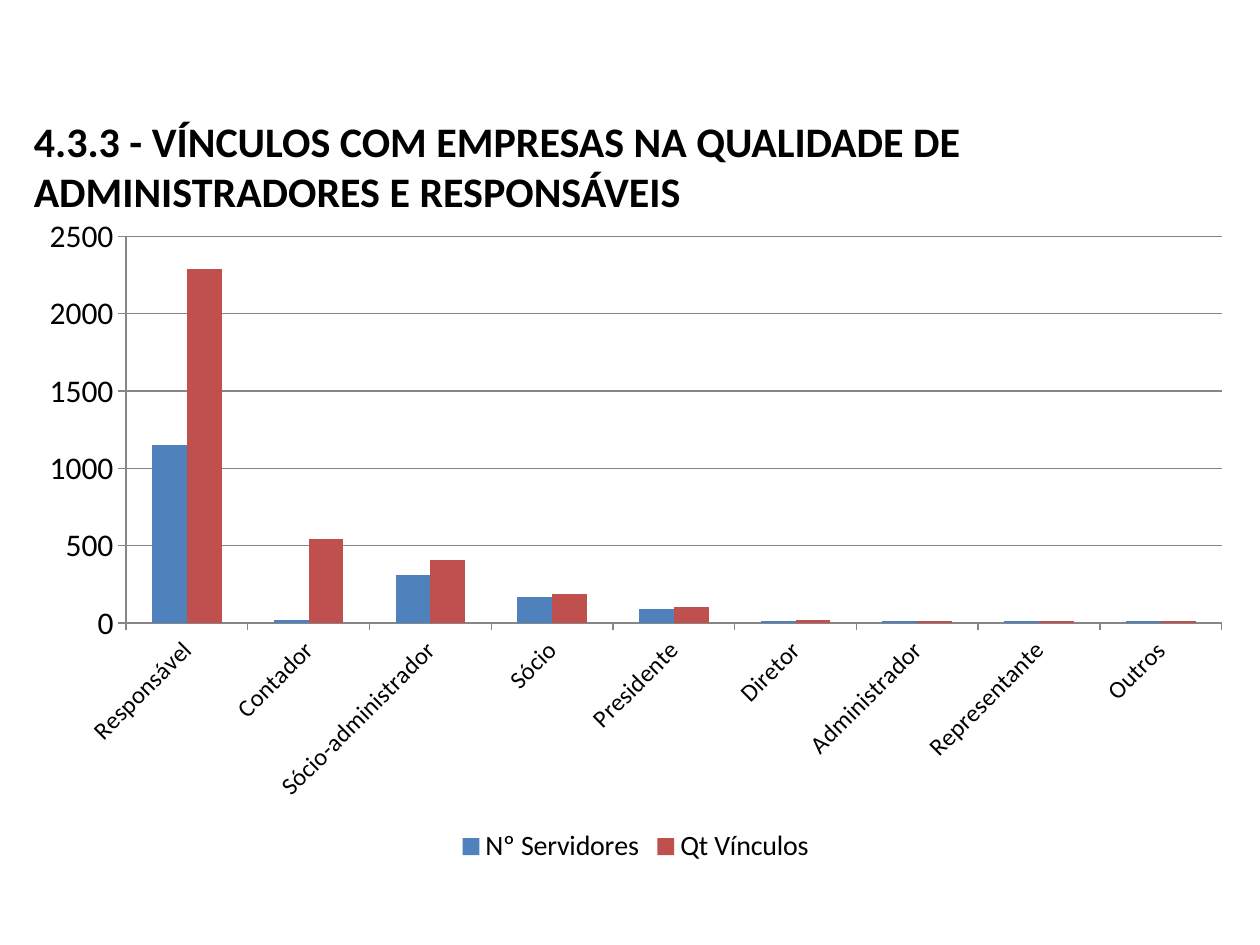
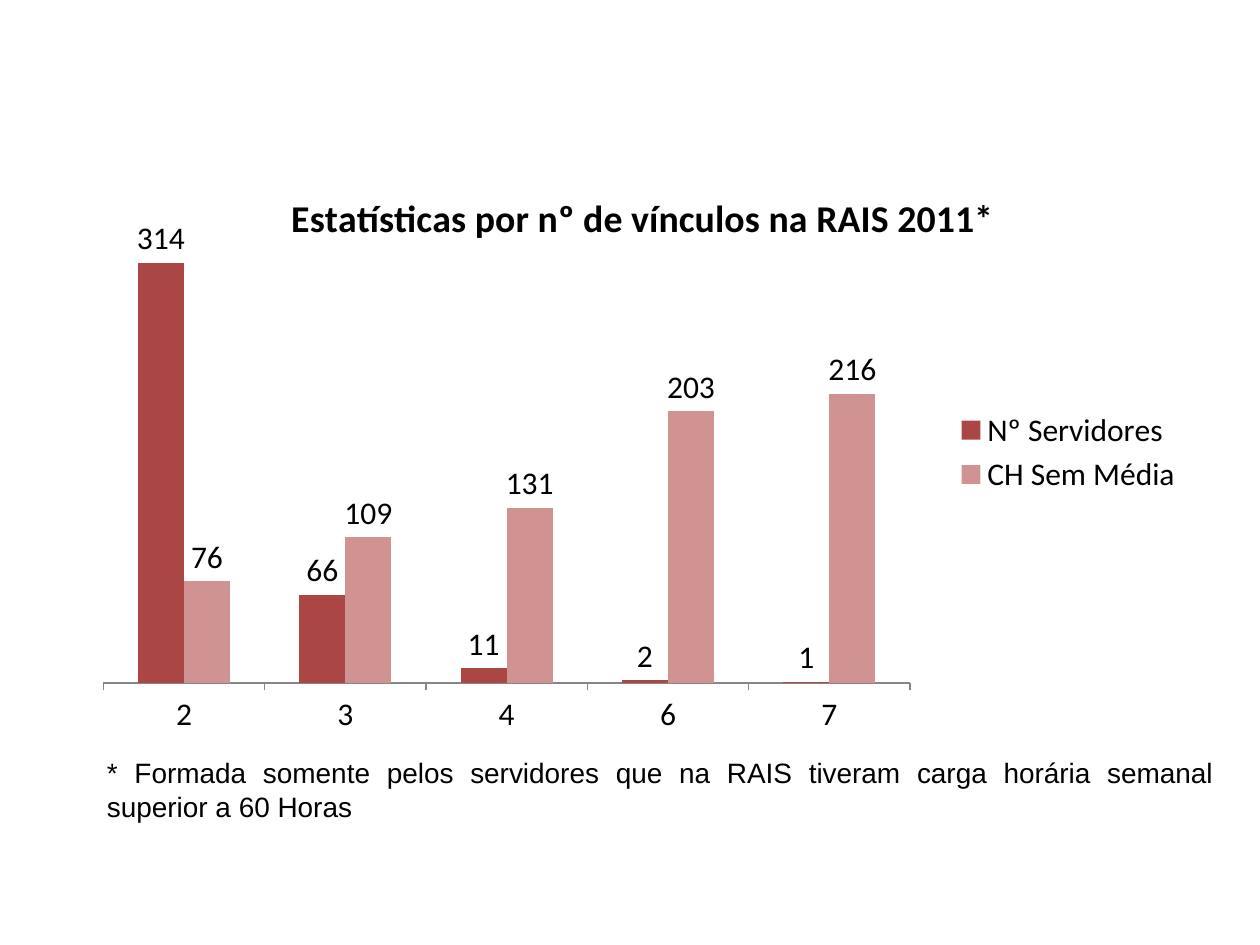
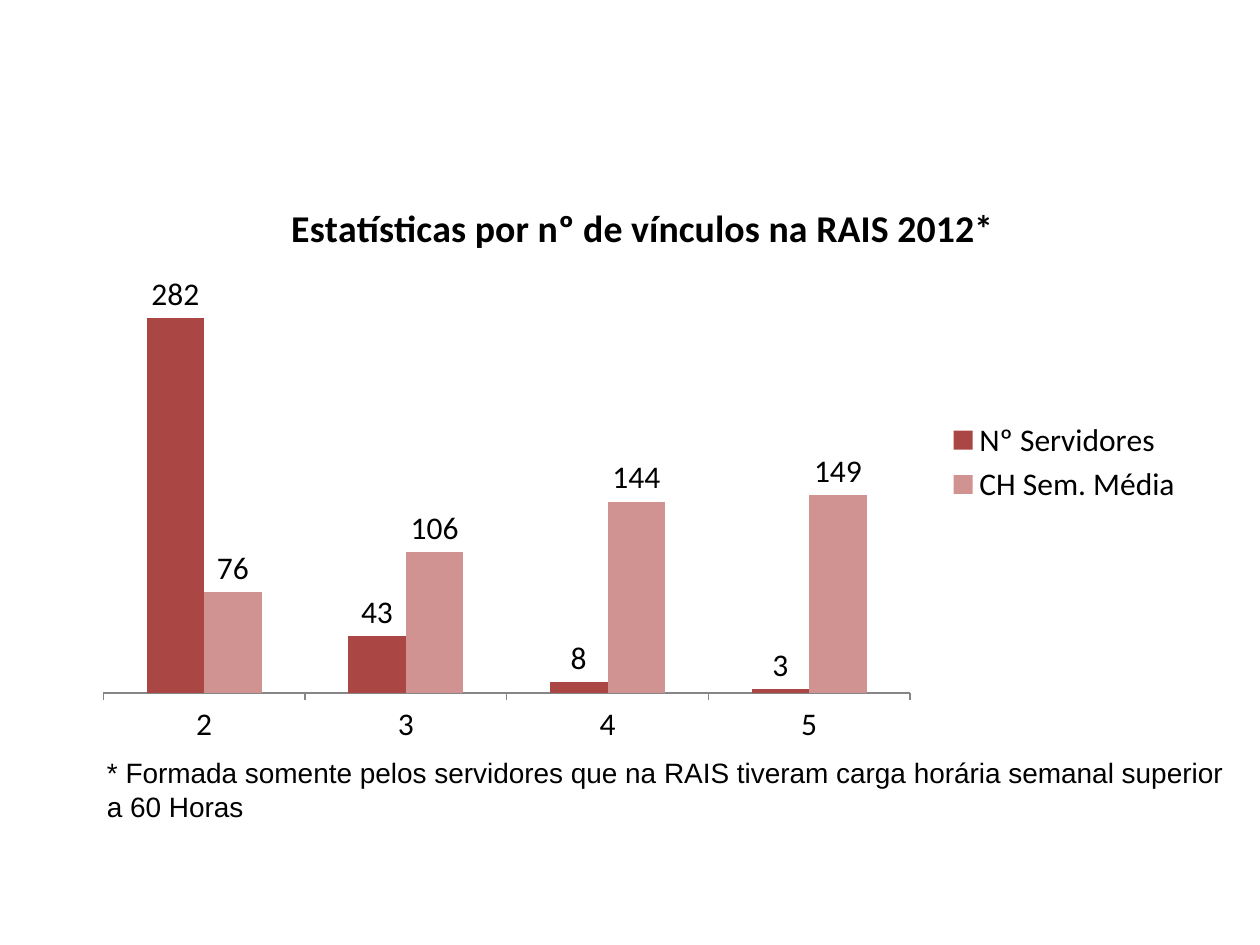
from dataclasses import dataclass

from lxml.etree import SubElement as Sub
from pptx import Presentation
from pptx.chart.chart import Chart
from pptx.chart.data import CategoryChartData as Data
from pptx.dml.color import RGBColor
from pptx.enum.chart import XL_CHART_TYPE as Kind
from pptx.enum.chart import XL_LABEL_POSITION as Spot
from pptx.enum.chart import XL_LEGEND_POSITION as Side
from pptx.enum.chart import XL_TICK_MARK as Tick
from pptx.enum.text import MSO_ANCHOR as Anchor
from pptx.enum.text import MSO_AUTO_SIZE as Fit
from pptx.enum.text import PP_ALIGN as Align
from pptx.oxml.ns import qn
from pptx.slide import Slide
from pptx.util import Pt

# Shared look
BLACK, GREY = "000000", "868686"
BLUE, RED = "4F81BD", "C0504D"
DARK, PINK = "AA4744", "D09391"
HEAD, BODY = "Calibri", "Arial"
NOTE = ("* Formada somente pelos servidores que na RAIS tiveram "
        "carga horária semanal superior a 60 Horas")


@dataclass
class Box:
    x: float
    y: float
    w: float
    h: float

    def pts(self) -> tuple:
        return Pt(self.x), Pt(self.y), Pt(self.w), Pt(self.h)


@dataclass
class Bars:
    name: str
    vals: list
    color: str


@dataclass
class Stats:
    """One slide of yearly figures with its footnote."""
    year: int
    top: float
    cats: list
    bars: list
    plot: tuple
    peak: int
    width: float


ROLES = ["Responsável", "Contador", "Sócio-administrador", "Sócio",
         "Presidente", "Diretor", "Administrador", "Representante", "Outros"]
TIES = [
    Bars("Nº Servidores", [1150, 20, 310, 170, 90, 10, 10, 10, 10], BLUE),
    Bars("Qt Vínculos", [2290, 540, 410, 190, 100, 20, 10, 10, 10], RED),
]
YEARS = [
    Stats(2011, 88.56, ["2", "3", "4", "6", "7"],
          [Bars("Nº Servidores", [314, 66, 11, 2, 1], DARK),
           Bars("CH Sem Média", [76, 109, 131, 203, 216], PINK)],
          (0.017, 0.1, 0.726, 0.788), 350, 646.56),
    Stats(2012, 94.32, ["2", "3", "4", "5"],
          [Bars("Nº Servidores", [282, 43, 8, 3], DARK),
           Bars("CH Sem. Média", [76, 106, 144, 149], PINK)],
          (0.017, 0.218, 0.726, 0.67), 300, 652.32),
]


def rgb(code: str) -> RGBColor:
    return RGBColor.from_string(code)


def style(font, size: float, face: str = HEAD, bold: bool = False) -> None:
    font.size, font.name, font.bold = Pt(size), face, bold
    font.color.rgb = rgb(BLACK)


def write(slide: Slide, text: str, box: Box, *, size: float, face: str,
          bold: bool = False, align=Align.LEFT, anchor=Anchor.TOP,
          fit=Fit.NONE) -> None:
    frame = slide.shapes.add_textbox(*box.pts()).text_frame
    frame.word_wrap, frame.auto_size = True, fit
    frame.vertical_anchor = anchor
    para = frame.paragraphs[0]
    para.alignment = align
    run = para.add_run()
    run.text = text
    style(run.font, size, face, bold)


def rule(line) -> None:
    line.color.rgb, line.width = rgb(GREY), Pt(0.75)


def place(node, keys: str, vals: tuple, inner: bool = False) -> None:
    """Fix the position of a chart part as fractions of the chart."""
    lay = node.find(qn("c:layout"))
    if lay is None:
        lay = Sub(node, qn("c:layout"))
    node.remove(lay)
    text = node.find(qn("c:tx"))
    node.insert(0 if text is None else node.index(text) + 1, lay)
    for kid in list(lay):
        lay.remove(kid)
    hand = Sub(lay, qn("c:manualLayout"))
    if inner:
        Sub(hand, qn("c:layoutTarget")).set("val", "inner")
    for key in "xy":
        Sub(hand, qn(f"c:{key}Mode")).set("val", "edge")
    for key, val in zip(keys, vals):
        Sub(hand, qn(f"c:{key}")).set("val", str(val))


def graph(slide: Slide, box: Box, cats: list, bars: list, peak: int,
          side, small: float) -> Chart:
    data = Data(number_format="0")
    data.categories = cats
    for bar in bars:
        data.add_series(bar.name, bar.vals)
    chart = slide.shapes.add_chart(
        Kind.COLUMN_CLUSTERED, *box.pts(), data).chart
    style(chart.font, 18)
    chart.has_title = False

    # Columns
    plot = chart.plots[0]
    plot.gap_width, plot.overlap, plot.vary_by_categories = 150, 0, False
    for item, bar in zip(plot.series, bars):
        item.format.fill.solid()
        item.format.fill.fore_color.rgb = rgb(bar.color)
        item.invert_if_negative = False

    # Axes
    for axis in (chart.category_axis, chart.value_axis):
        axis.major_tick_mark, axis.minor_tick_mark = Tick.OUTSIDE, Tick.NONE
        rule(axis.format.line)
    chart.value_axis.minimum_scale = 0
    chart.value_axis.maximum_scale = peak

    # Legend
    chart.has_legend = True
    chart.legend.position = side
    chart.legend.include_in_layout = False
    style(chart.legend.font, small)
    return chart


def roles(slide: Slide) -> None:
    write(slide, "4.3.3 - VÍNCULOS COM EMPRESAS NA QUALIDADE DE "
          "ADMINISTRADORES E RESPONSÁVEIS", Box(12.24, 49.68, 648, 90),
          size=24, face=HEAD, bold=True, anchor=Anchor.MIDDLE)
    chart = graph(slide, Box(14.4, 116.64, 697.68, 380.16), ROLES, TIES,
                  2500, Side.BOTTOM, 16)
    rule(chart.value_axis.major_gridlines.format.line)
    chart.value_axis.major_unit = 500
    labels = chart.category_axis.tick_labels
    style(labels.font, 14)
    body = chart.category_axis._element.find(qn("c:txPr")).find(qn("a:bodyPr"))
    body.set("rot", "-2700000")


def stats(slide: Slide, info: Stats) -> None:
    chart = graph(slide, Box(48.24, info.top, 635.04, 339.84), info.cats,
                  info.bars, info.peak, Side.RIGHT, 18)
    chart.value_axis.has_major_gridlines = False
    chart.value_axis.visible = False
    place(chart._chartSpace.chart.plotArea, "xywh", info.plot, inner=True)

    # Values above the columns
    for item in chart.plots[0].series:
        tags = item.data_labels
        tags.show_value, tags.position = True, Spot.OUTSIDE_END
        style(tags.font, 18)

    # Heading of the chart
    title = chart.chart_title
    run = title.text_frame.paragraphs[0].add_run()
    run.text = f"Estatísticas por nº de vínculos na RAIS {info.year}*"
    style(run.font, 21.6, bold=True)
    title.include_in_layout = False
    place(title._element, "xy", (0.18, 0.05))

    write(slide, NOTE, Box(54, 428.4, info.width, 46.08), size=16, face=BODY,
          align=Align.JUSTIFY, fit=Fit.SHAPE_TO_FIT_TEXT)


def main() -> None:
    deck = Presentation()
    deck.slide_width, deck.slide_height = Pt(720), Pt(540)
    blank = deck.slide_layouts[6]
    roles(deck.slides.add_slide(blank))
    for info in YEARS:
        stats(deck.slides.add_slide(blank), info)
    deck.save("out.pptx")


if __name__ == "__main__":
    main()
